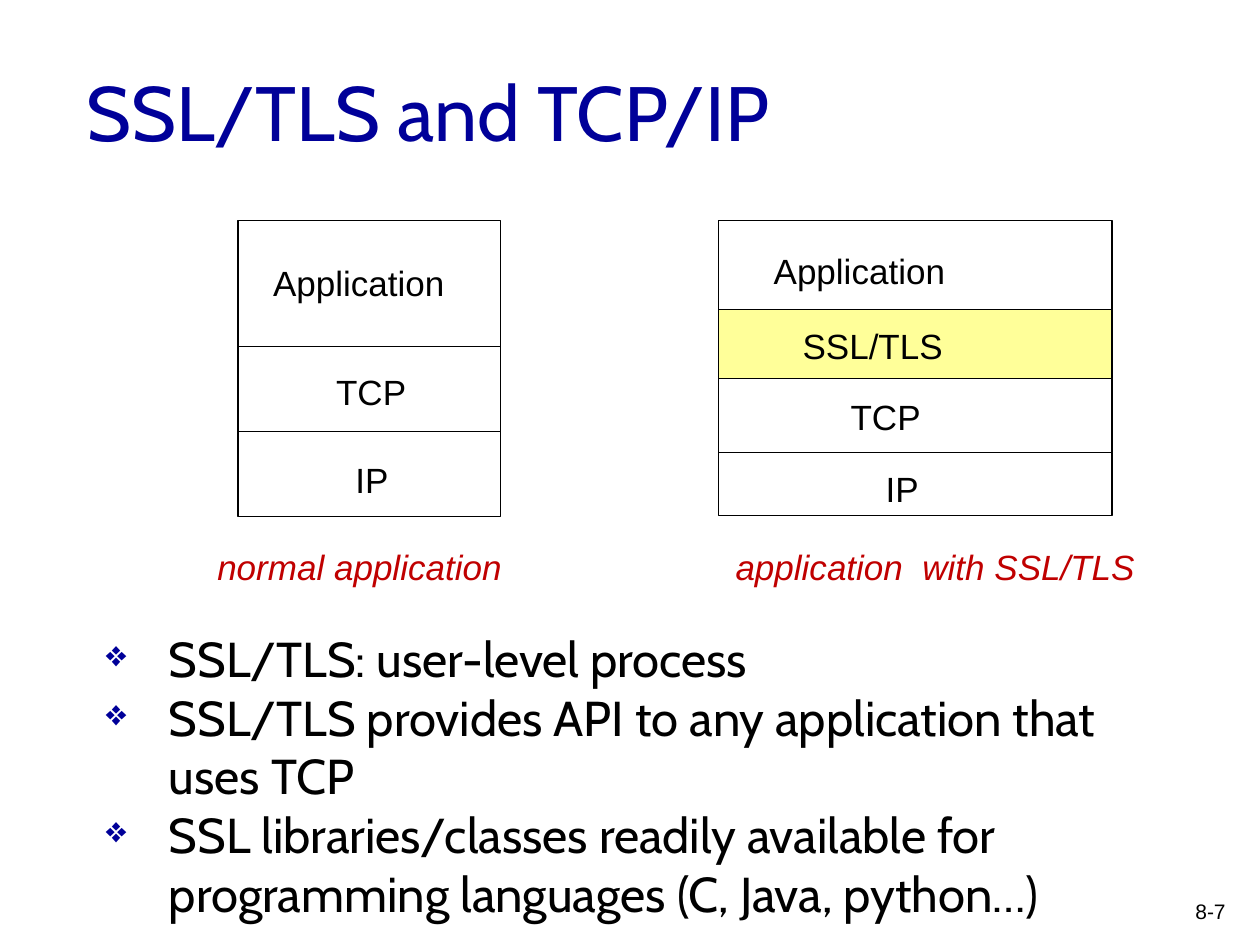
"""Build the slide that compares the TCP/IP stack with and without SSL/TLS."""
from lxml.etree import SubElement
from pptx import Presentation
from pptx.dml.color import RGBColor
from pptx.enum.shapes import MSO_SHAPE
from pptx.enum.text import MSO_ANCHOR, PP_ALIGN
from pptx.oxml.ns import qn
from pptx.util import Pt

BLACK = RGBColor(0x00, 0x00, 0x00)
NAVY = RGBColor(0x00, 0x00, 0x99)
RED = RGBColor(0xC0, 0x00, 0x00)
YELLOW = RGBColor(0xFF, 0xFF, 0x99)

TITLE = "SSL/TLS and TCP/IP"
STACK_TOP = 126
LABEL_HEIGHT = 31.5
CAPTION_TOP = 308
STACKS = [
    {
        "left": 136, "width": 150,
        "layers": [
            ("Application", 72, None, (149, 146, 114)),
            ("TCP", 48.5, None, (185, 208, 55)),
            ("IP", 48.5, None, (196, 258.5, 34)),
        ],
        "caption": ("normal application", 114, 183),
    },
    {
        "left": 410.5, "width": 225,
        "layers": [
            ("Application", 51, None, (435, 139, 171)),
            ("SSL/TLS", 39.5, YELLOW, (451.5, 182, 143)),
            ("TCP", 42, None, (479, 222.5, 83)),
            ("IP", 36, None, (499, 263.5, 50)),
        ],
        "caption": ("application  with SSL/TLS", 379.5, 310),
    },
]
BULLETS = [
    "SSL/TLS: user-level process",
    "SSL/TLS provides API to any application that uses TCP",
    "SSL libraries/classes readily available for programming languages (C, Java, python…)",
]
PAGE = "8-7"


def add_run(p, text, size, font="Arial", color=BLACK, italic=False):
    r = p.add_run()
    r.text = text
    r.font.size = Pt(size)
    r.font.name = font
    r.font.color.rgb = color
    r.font.italic = italic


def add_text_box(shapes, left, top, width, height):
    tf = shapes.add_textbox(Pt(left), Pt(top), Pt(width), Pt(height)).text_frame
    tf.word_wrap = True
    return tf


def add_layer(shapes, left, top, width, height, fill):
    sp = shapes.add_shape(MSO_SHAPE.RECTANGLE, Pt(left), Pt(top), Pt(width), Pt(height))
    sp.shadow.inherit = False
    sp.line.color.rgb = BLACK
    sp.line.width = Pt(0.75)
    if fill is None:
        sp.fill.background()
    else:
        sp.fill.solid()
        sp.fill.fore_color.rgb = fill


def add_stack(s, stack):
    shapes = s.shapes.add_group_shape().shapes
    top = STACK_TOP
    for text, height, fill, (x, y, width) in stack["layers"]:
        add_layer(shapes, stack["left"], top, stack["width"], height, fill)
        tf = add_text_box(shapes, x, y, width, LABEL_HEIGHT)
        tf.margin_right = 0
        add_run(tf.paragraphs[0], text, 20)
        top += height
    text, left, width = stack["caption"]
    p = add_text_box(shapes, left, CAPTION_TOP, width, LABEL_HEIGHT).paragraphs[0]
    p.alignment = PP_ALIGN.CENTER
    add_run(p, text, 20, color=RED, italic=True)


def add_bullet(p, char, color, percent, indent):
    pPr = p._p.get_or_add_pPr()
    pPr.set("marL", str(Pt(indent)))
    pPr.set("indent", str(-Pt(indent)))
    SubElement(SubElement(pPr, qn("a:buClr")), qn("a:srgbClr"), val=str(color))
    SubElement(pPr, qn("a:buSzPct"), val=str(percent * 1000))
    SubElement(pPr, qn("a:buChar"), char=char)


def main():
    prs = Presentation()
    prs.slide_width, prs.slide_height = Pt(720), Pt(540)
    s = prs.slides.add_slide(prs.slide_layouts[5])

    title = s.shapes.title
    title.left, title.top, title.width, title.height = Pt(42), Pt(18), Pt(612), Pt(90)
    title.text_frame.vertical_anchor = MSO_ANCHOR.MIDDLE
    p = title.text_frame.paragraphs[0]
    p.alignment = PP_ALIGN.LEFT
    add_run(p, TITLE, 44, "Cabin", NAVY)

    for stack in STACKS:
        add_stack(s, stack)

    tf = add_text_box(s.shapes, 53.5, 355.5, 606, 177)
    for i, text in enumerate(BULLETS):
        p = tf.add_paragraph() if i else tf.paragraphs[0]
        add_bullet(p, "❖", NAVY, 74, 36)
        add_run(p, text, 28, "Cabin")

    p = add_text_box(s.shapes, 654.5, 510, 53, 24).paragraphs[0]
    p.alignment = PP_ALIGN.RIGHT
    add_run(p, PAGE, 12)

    prs.save("out.pptx")


if __name__ == "__main__":
    main()
